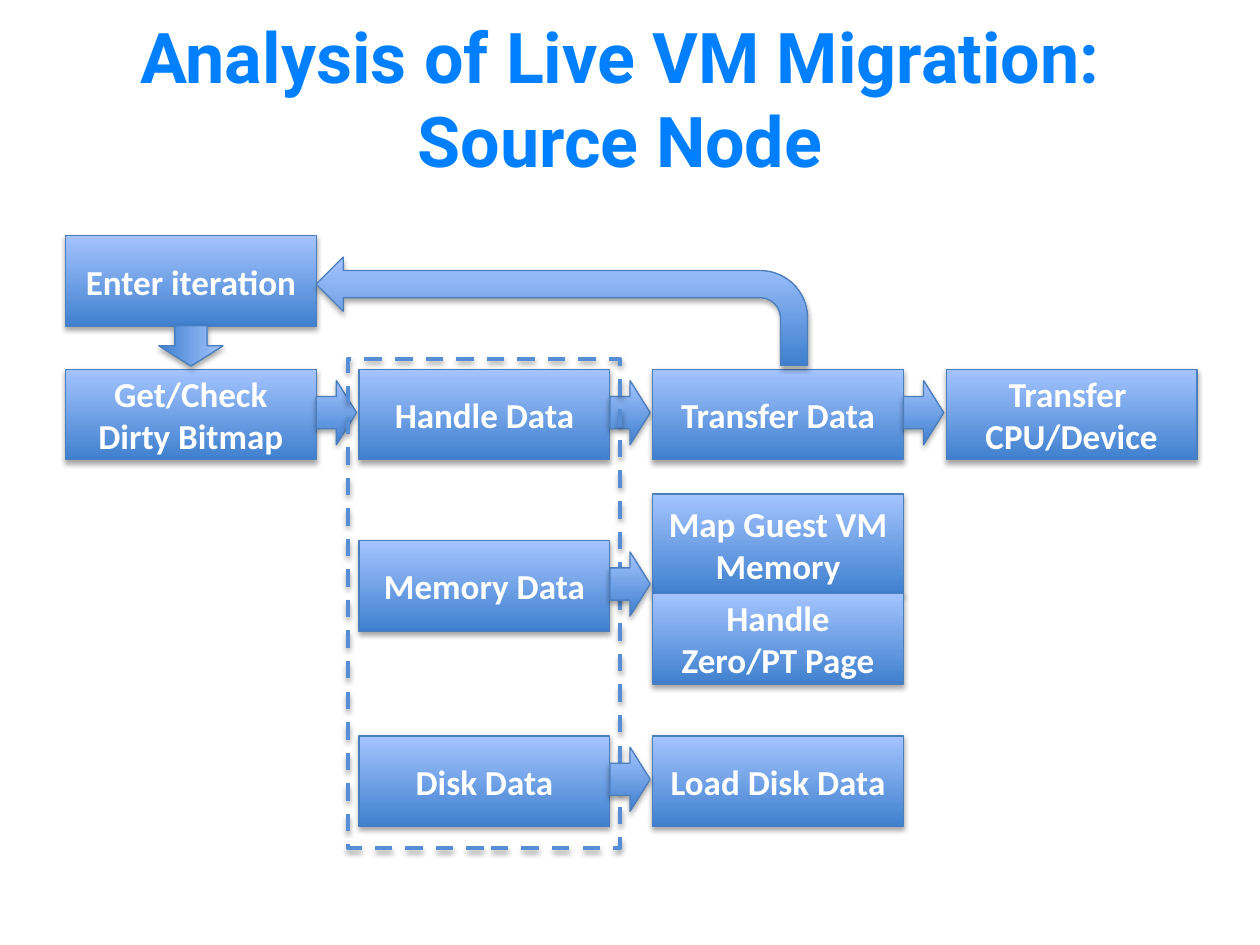
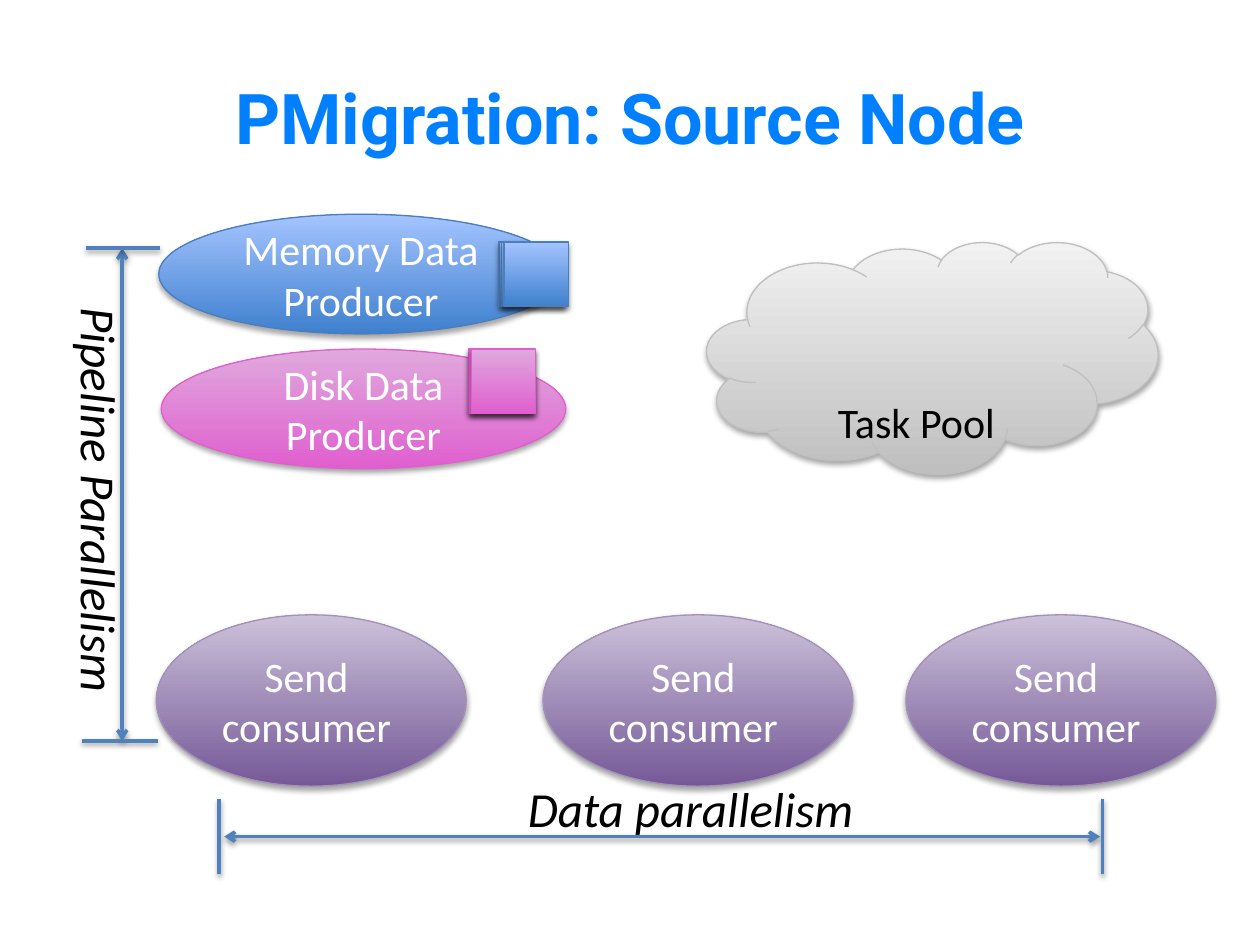
from collections import namedtuple

from lxml import etree
from pptx import Presentation
from pptx.dml.color import RGBColor
from pptx.enum import dml, shapes, text
from pptx.oxml import ns
from pptx.util import Inches, Pt

Paint = namedtuple("Paint", "dark light edge")

WHITE = RGBColor(0xFF, 0xFF, 0xFF)
BLACK = RGBColor(0, 0, 0)
TITLE_BLUE = RGBColor(0x00, 0x80, 0xFF)
DASH_BLUE = RGBColor(0x55, 0x8E, 0xD5)
RULE_BLUE = RGBColor(0x4F, 0x81, 0xBD)
BLUE = Paint(RGBColor(0x3F, 0x80, 0xCE), RGBColor(0xA4, 0xC4, 0xFF), RGBColor(0x4B, 0x7E, 0xBC))
PINK = Paint(RGBColor(0xE0, 0x5F, 0xCF), RGBColor(0xE0, 0xA9, 0xDD), RGBColor(0xE0, 0x5F, 0xCF))
PURPLE = Paint(RGBColor(0x75, 0x59, 0x97), RGBColor(0xCC, 0xC1, 0xDA), RGBColor(0xA2, 0x92, 0xB5))
GREY = Paint(RGBColor(0xBF, 0xBF, 0xBF), RGBColor(0xF2, 0xF2, 0xF2), RGBColor(0xBF, 0xBF, 0xBF))

BODY_FONT, TITLE_FONT = "Calibri", "Roboto"
KIND = shapes.MSO_SHAPE
BOX_W, BOX_H = 1.99, 0.72
ARROW_W, ARROW_H = 0.32, 0.51
COLUMN_STEP = 2.33
ROWS = (0, 1.06, 2.42, 3.97)


def add_shadow(sp, alpha=35, dist=1.8):
    """Give a shape or connector a soft shadow straight below it."""
    spPr = sp._element.spPr
    for old in spPr.findall(ns.qn("a:effectLst")):
        spPr.remove(old)
    effects = etree.SubElement(spPr, ns.qn("a:effectLst"))
    shadow = etree.SubElement(effects, ns.qn("a:outerShdw"), blurRad=str(Pt(3.1)),
                              dist=str(Pt(dist)), dir="5400000", rotWithShape="0")
    color = etree.SubElement(shadow, ns.qn("a:srgbClr"), val="000000")
    etree.SubElement(color, ns.qn("a:alpha"), val=str(alpha * 1000))


def format_runs(tf, size, color, font=BODY_FONT, bold=False, italic=False, align=None):
    for p in tf.paragraphs:
        p.alignment = align
        for r in p.runs:
            r.font.name, r.font.size = font, Pt(size)
            r.font.bold, r.font.italic = bold, italic
            r.font.color.rgb = color


def add_title(s, label, left, top, width, height):
    title = s.shapes.title
    title.left, title.top = Inches(left), Inches(top)
    title.width, title.height = Inches(width), Inches(height)
    tf = title.text_frame
    tf.text = label
    tf.auto_size = text.MSO_AUTO_SIZE.NONE
    tf.vertical_anchor = text.MSO_ANCHOR.MIDDLE
    format_runs(tf, 40, TITLE_BLUE, TITLE_FONT, bold=True, align=text.PP_ALIGN.CENTER)


def add_block(s, kind, left, top, width, height, paint=BLUE):
    """Add a shape with a vertical gradient, a thin edge and a shadow."""
    sp = s.shapes.add_shape(kind, Inches(left), Inches(top), Inches(width), Inches(height))
    sp.fill.gradient()
    sp.fill.gradient_angle = 90
    for stop, color in zip(sp.fill.gradient_stops, (paint.dark, paint.light)):
        stop.color.rgb = color
    sp.line.color.rgb = paint.edge
    sp.line.width = Pt(0.75)
    add_shadow(sp)
    return sp


def write_label(sp, label, size, color=WHITE, bold=False):
    tf = sp.text_frame
    tf.word_wrap = True
    tf.vertical_anchor = text.MSO_ANCHOR.MIDDLE
    tf.text = label
    format_runs(tf, size, color, bold=bold, align=text.PP_ALIGN.CENTER)


def add_step(s, label, left, top, height=BOX_H):
    write_label(add_block(s, KIND.RECTANGLE, left, top, BOX_W, height), label, 20, bold=True)


def add_flow_arrow(s, left, top):
    return add_block(s, KIND.RIGHT_ARROW, left, top, ARROW_W, ARROW_H)


def add_oval(s, label, left, top, width, height, paint):
    sp = add_block(s, KIND.OVAL, left, top, width, height, paint)
    write_label(sp, label, 24)
    tf = sp.text_frame
    tf.margin_left = tf.margin_right = Inches(0.04)
    tf.margin_top = tf.margin_bottom = 0


def add_flow_chart(s, left, top):
    columns = [left + COLUMN_STEP * i for i in range(4)]
    enter, main, memory, disk = [top + row for row in ROWS]

    def arrow_after(column, row):
        add_flow_arrow(s, columns[column] + BOX_W, row + 0.09)

    main_steps = ("Get/Check Dirty Bitmap", "Handle Data", "Transfer Data",
                  "Transfer \nCPU/Device")
    add_step(s, main_steps[0], columns[0], main)
    for i, label in enumerate(main_steps[1:]):
        arrow_after(i, main)
        add_step(s, label, columns[i + 1], main)

    add_step(s, "Enter iteration", columns[0], enter)
    down = add_flow_arrow(s, columns[0] + (BOX_W - ARROW_W) / 2, enter + 0.62)
    down.rotation = 90
    loop = add_block(s, KIND.BENT_ARROW, columns[0] + BOX_W, enter + 0.17, 3.9, 0.86)
    loop._element.spPr.get_or_add_xfrm().set("flipH", "1")

    add_step(s, "Memory Data", columns[1], memory)
    add_step(s, "Map Guest VM Memory", columns[2], memory - 0.37, 0.8)
    add_step(s, "Handle Zero/PT Page", columns[2], memory + 0.42)
    add_step(s, "Disk Data", columns[1], disk)
    add_step(s, "Load Disk Data", columns[2], disk)

    frame = s.shapes.add_shape(KIND.RECTANGLE, Inches(columns[1] - 0.09),
                               Inches(main - 0.08), Inches(2.16), Inches(3.88))
    frame.fill.background()
    frame.line.color.rgb = DASH_BLUE
    frame.line.width = Pt(2.5)
    frame.line.dash_style = dml.MSO_LINE.DASH
    add_shadow(frame)
    for row in (memory, disk):
        arrow_after(1, row)


def add_producer(s, label, left, top, paint, task_left, task_top, shift):
    """Add an oval with three closely stacked task squares on it."""
    add_oval(s, label, left, top, 3.21, 0.95, paint)
    for i in range(3):
        add_block(s, KIND.RECTANGLE, left + task_left + shift * i, top + task_top,
                  0.51, 0.51, paint)


def add_task_pool(s, left, top):
    cloud = add_block(s, KIND.CLOUD, left, top, 3.58, 1.84, GREY)
    write_label(cloud, "Task Pool", 24, BLACK)
    cloud.text_frame.vertical_anchor = text.MSO_ANCHOR.BOTTOM
    cloud.text_frame.margin_bottom = Inches(-0.15)


def add_rule(group, x1, y1, x2, y2, arrows=False):
    rule = group.shapes.add_connector(shapes.MSO_CONNECTOR.STRAIGHT, Inches(x1), Inches(y1),
                                      Inches(x2), Inches(y2))
    rule.line.color.rgb = RULE_BLUE
    rule.line.width = Pt(2)
    if arrows:
        for end in ("a:headEnd", "a:tailEnd"):
            etree.SubElement(rule.line._get_or_add_ln(), ns.qn(end), type="arrow")
    add_shadow(rule, 38, 1.6)


def add_dimension(s, label, rules, left, top, width, height, vertical=False):
    """Add a group of a two-headed arrow, its two end bars and a caption."""
    group = s.shapes.add_group_shape()
    for i, ends in enumerate(rules):
        add_rule(group, *ends, arrows=i == 0)
    caption = group.shapes.add_textbox(Inches(left), Inches(top), Inches(width), Inches(height))
    tf = caption.text_frame
    tf.text = label
    tf.word_wrap = False
    tf.auto_size = text.MSO_AUTO_SIZE.SHAPE_TO_FIT_TEXT
    if vertical:
        tf._txBody.bodyPr.set("vert", "vert")
    format_runs(tf, 28, BLACK, italic=True)


def add_pipeline_dimension(s, left, top, length):
    x, bottom = left + 0.56, top + length
    rules = [(x, bottom, x, top), (x + 0.3, top, x - 0.29, top),
             (x + 0.28, bottom, x - 0.32, bottom)]
    add_dimension(s, "Pipeline Parallelism", rules, left, top + 0.37, 0.67, 3.29, vertical=True)


def add_data_dimension(s, left, top, length):
    right, y = left + length, top + 0.51
    rules = [(left + 0.04, y, right - 0.02, y)]
    rules += [(x, y - 0.3, x, y + 0.3) for x in (right, left)]
    add_dimension(s, "Data parallelism", rules, left + 2.35, top, 2.92, 0.57)


def build_analysis_slide(prs):
    s = prs.slides.add_slide(prs.slide_layouts[5])
    add_title(s, "Analysis of Live VM Migration:\vSource Node", -0.16, 0, 10.16, 1.55)
    add_flow_chart(s, 0.52, 1.87)


def build_pmigration_slide(prs):
    s = prs.slides.add_slide(prs.slide_layouts[5])
    add_title(s, "PMigration: Source Node", 0.5, 0.3, 9, 1.25)
    for left in (1.24, 4.31, 7.19):
        add_oval(s, "Send \nconsumer ", left, 4.88, 2.46, 1.36, PURPLE)
    add_producer(s, "Memory Data\nProducer", 1.26, 1.7, BLUE, 2.7, 0.22, 0.02)
    add_producer(s, "Disk Data\nProducer", 1.28, 2.77, PINK, 2.44, 0, 0.01)
    add_task_pool(s, 5.61, 1.92)
    add_pipeline_dimension(s, 0.41, 1.97, 3.91)
    add_data_dimension(s, 1.74, 6.13, 7.01)


def main():
    prs = Presentation()
    prs.slide_width, prs.slide_height = Inches(10), Inches(7.5)
    build_analysis_slide(prs)
    build_pmigration_slide(prs)
    prs.save("out.pptx")


if __name__ == "__main__":
    main()
